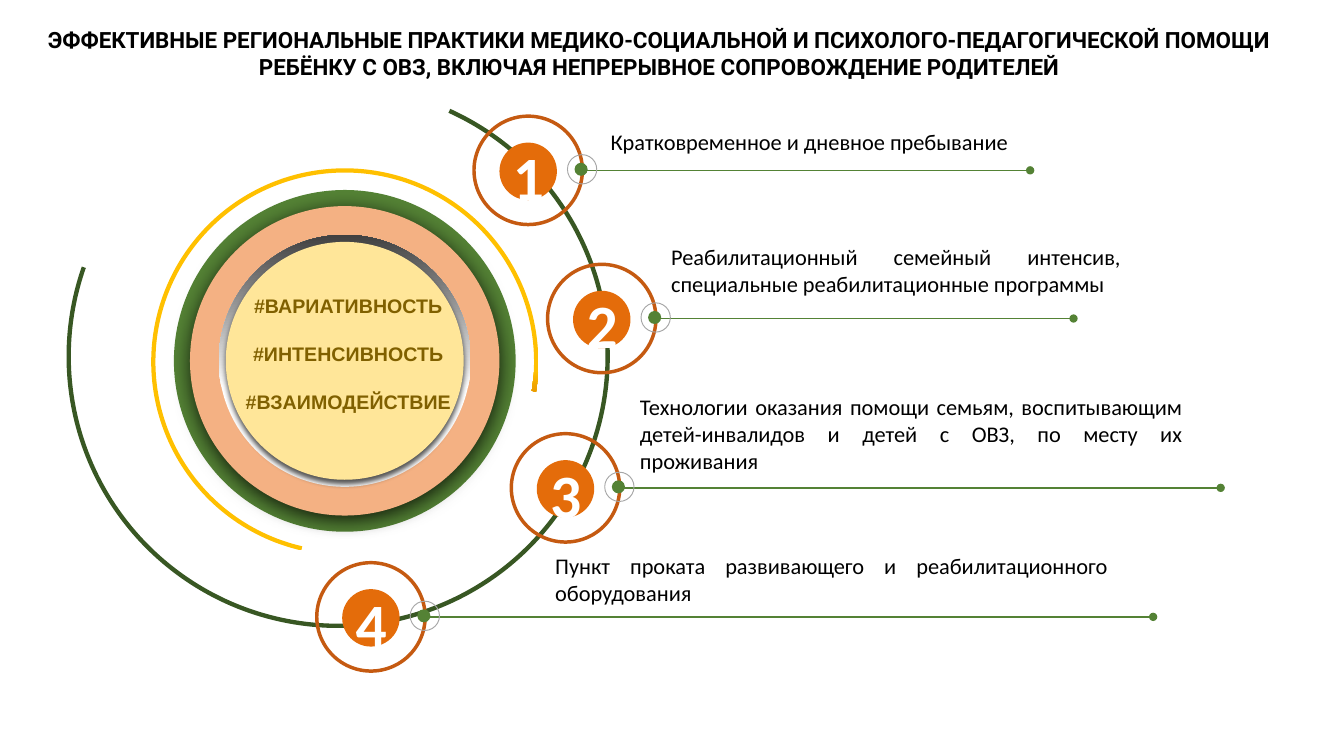
from lxml import etree
from pptx import Presentation
from pptx.dml.color import RGBColor
from pptx.enum.shapes import MSO_CONNECTOR, MSO_SHAPE as SHAPE
from pptx.enum.text import PP_ALIGN as ALIGN
from pptx.oxml import parse_xml
from pptx.oxml.ns import nsdecls, qn
from pptx.util import Inches, Pt

CELL = 0.1  # inches: the slide is a square grid of 133.3 columns by 75 rows
COLS, ROWS = 133.33, 75
GREEN, ORANGE, RUST, GREY = "548235", "E46C0A", "C55A11", "A6A6A6"
HUB = (34.2, 35.8)
RING = 11.1  # diameter of a numbered ring

TITLE = ("ЭФФЕКТИВНЫЕ РЕГИОНАЛЬНЫЕ ПРАКТИКИ МЕДИКО-СОЦИАЛЬНОЙ И "
         "ПСИХОЛОГО-ПЕДАГОГИЧЕСКОЙ ПОМОЩИ РЕБЁНКУ С ОВЗ, ВКЛЮЧАЯ "
         "НЕПРЕРЫВНОЕ СОПРОВОЖДЕНИЕ РОДИТЕЛЕЙ")
HASHTAGS = ["#ВАРИАТИВНОСТЬ", "#ИНТЕНСИВНОСТЬ", "#ВЗАИМОДЕЙСТВИЕ"]

# Ring centre, end column of the line, text box, text
PRACTICES = [
    ((52.4, 16.9), 102.2, (59.6, 12.2, 42.6, 3.7),
     "Кратковременное и дневное пребывание"),
    ((59.7, 31.6), 106.5, (65.6, 23.6, 46.6, 6.4),
     "Реабилитационный семейный интенсив, специальные реабилитационные программы"),
    ((56.1, 48.4), 121.1, (62.5, 38.5, 55.8, 9.1),
     "Технологии оказания помощи семьям, воспитывающим детей-инвалидов "
     "и детей с ОВЗ, по месту их проживания"),
    ((36.8, 61.2), 114.4, (54.1, 54.3, 56.8, 6.4),
     "Пункт проката развивающего и реабилитационного оборудования"),
]


def cells(n):
    return Inches(n * CELL)


def color(value):
    return RGBColor.from_string(value)


def add_round(slide, kind, center, size, fill=None, adj=(), turn=0):
    """Round shape given by its centre and diameter."""
    x, y = center
    s = slide.shapes.add_shape(kind, cells(x - size / 2), cells(y - size / 2),
                               cells(size), cells(size))
    for i, value in enumerate(adj):
        s.adjustments[i] = value
    s.rotation = turn
    s.shadow.inherit = False
    s.line.fill.background()
    if fill:
        s.fill.solid()
        s.fill.fore_color.rgb = color(fill)
    return s


def set_gradient(s, stops, direction):
    stop_xml = "".join(f'<a:gs pos="{pos * 1000}"><a:srgbClr val="{c}"/></a:gs>'
                       for pos, c in stops)
    grad = parse_xml(f'<a:gradFill {nsdecls("a")} rotWithShape="1">'
                     f'<a:gsLst>{stop_xml}</a:gsLst>{direction}</a:gradFill>')
    s._element.spPr.find(qn("a:prstGeom")).addnext(grad)


def add_shadow(s, opacity, blur, distance):
    """Black shadow that falls straight down."""
    effects = s._element.spPr.find(qn("a:effectLst"))
    effects.append(parse_xml(
        f'<a:outerShdw {nsdecls("a")} blurRad="{Pt(blur)}" dist="{Pt(distance)}" '
        f'dir="5400000" algn="t" rotWithShape="0"><a:srgbClr val="000000">'
        f'<a:alpha val="{opacity * 1000}"/></a:srgbClr></a:outerShdw>'))


def add_text(slide, box, lines, size, font, rgb="000000", bold=False,
             align=ALIGN.JUSTIFY, spacing=None, gap=0):
    tf = slide.shapes.add_textbox(*map(cells, box)).text_frame
    tf.word_wrap = True
    for i, line in enumerate(lines):
        p = tf.paragraphs[0] if i == 0 else tf.add_paragraph()
        p.text = line
        p.alignment = align
        if spacing:
            p.line_spacing = spacing
        if i and gap:
            p.space_before = Pt(gap)
        p.font.size, p.font.name, p.font.bold = Pt(size), font, bold
        p.font.color.rgb = color(rgb)


def add_dotted_line(slide, x1, x2, y):
    """Horizontal line with a round tip on the right."""
    c = slide.shapes.add_connector(MSO_CONNECTOR.STRAIGHT, cells(x1), cells(y),
                                   cells(x2), cells(y))
    c.line.color.rgb = color(GREEN)
    c.line.width = Pt(1)
    etree.SubElement(c.line._get_or_add_ln(), qn("a:tailEnd"), type="oval")
    etree.SubElement(c._element.spPr, qn("a:effectLst"))


def add_hub(slide):
    # Open arcs around the hub
    add_round(slide, SHAPE.BLOCK_ARC, (33.55, 35.35), 53.9, "385723",
              (56.92, 215.88, 0.008), 199.5)
    arc = add_round(slide, SHAPE.BLOCK_ARC, (34.2, 35.9), 38.4,
                    adj=(56.92, 0.43, 0.011), turn=8.1)
    set_gradient(arc, [(66, "BF4501"), (96, "FFC000")],
                 '<a:path path="rect"><a:fillToRect l="100000" t="100000"/></a:path>')
    # Nested discs
    add_round(slide, SHAPE.OVAL, HUB, 33.9, GREEN)
    add_shadow(add_round(slide, SHAPE.OVAL, HUB, 30.7, "F4B183"), 76, 14, 3)
    rim = add_round(slide, SHAPE.OVAL, HUB, 25)
    set_gradient(rim, [(39, "FFFFFF"), (100, "404040")], '<a:lin ang="16200000"/>')
    add_shadow(add_round(slide, SHAPE.OVAL, HUB, 23.6, "FFE699"), 67, 4, 3)


def add_practice(slide, number, center, line_end, box, text):
    x, y = center
    edge = x + RING / 2
    # Line, ring, joint and disc
    add_dotted_line(slide, edge, line_end, y)
    add_round(slide, SHAPE.DONUT, center, RING, RUST, [0.031])
    add_round(slide, SHAPE.DONUT, (edge - 0.2, y - 0.1), 3, GREY, [0.031])
    add_round(slide, SHAPE.OVAL, (edge - 0.3, y - 0.1), 1.3, GREEN)
    add_round(slide, SHAPE.OVAL, (x, y + 0.1), 5.7, ORANGE)
    # Number and description
    add_text(slide, (x - 2.5, y - 5.8, 7.5, 10), [str(number)], 44, "Calibri",
             "FFFFFF", bold=True, spacing=1.3)
    add_text(slide, box, [text], 16, "Calibri")


def main():
    prs = Presentation()
    prs.slide_width, prs.slide_height = cells(COLS), cells(ROWS)
    slide = prs.slides.add_slide(prs.slide_layouts[6])
    add_hub(slide)
    for number, practice in enumerate(PRACTICES, 1):
        add_practice(slide, number, *practice)
    add_text(slide, (0, 2.1, 130.8, 6.4), [TITLE], 16, "Roboto", bold=True,
             align=ALIGN.CENTER)
    add_text(slide, (21.7, 28.7, 25.7, 12.8), HASHTAGS, 14, "Arial", "806000",
             bold=True, align=ALIGN.CENTER, gap=17.5)
    prs.save("out.pptx")


if __name__ == "__main__":
    main()
